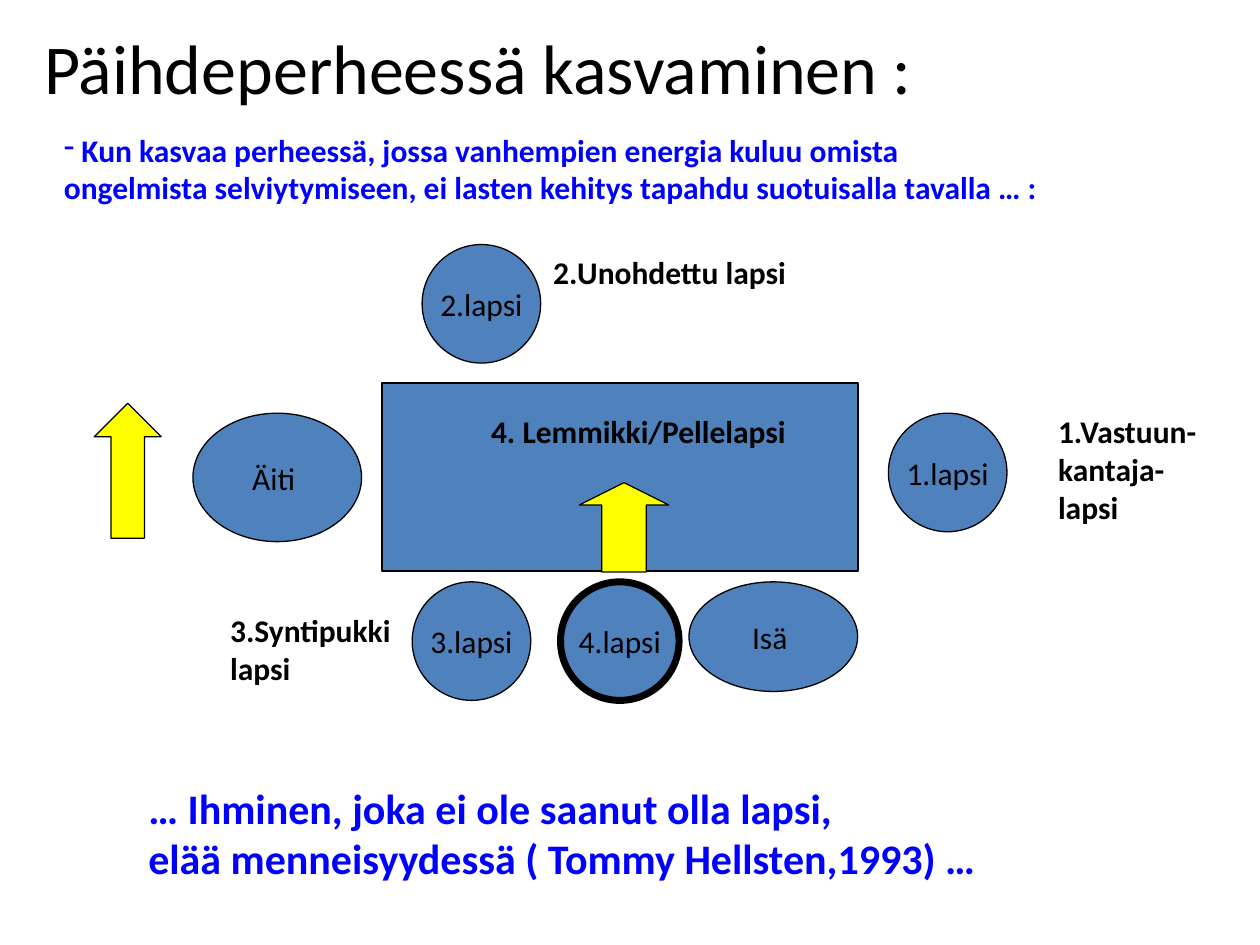
from lxml import etree
from pptx import Presentation
from pptx.dml.color import RGBColor
from pptx.enum.shapes import MSO_SHAPE
from pptx.enum.text import MSO_ANCHOR, MSO_AUTO_SIZE, PP_ALIGN
from pptx.oxml.ns import qn
from pptx.util import Cm, Pt

RECTANGLE, OVAL, UP_ARROW = MSO_SHAPE.RECTANGLE, MSO_SHAPE.OVAL, MSO_SHAPE.UP_ARROW
MIDDLE, CENTER = MSO_ANCHOR.MIDDLE, PP_ALIGN.CENTER
FIT_SHAPE = MSO_AUTO_SIZE.SHAPE_TO_FIT_TEXT

BLACK = RGBColor(0x00, 0x00, 0x00)
TABLE_BLUE = RGBColor(0x4F, 0x81, 0xBD)
TEXT_BLUE = RGBColor(0x00, 0x00, 0xFF)
YELLOW = RGBColor(0xFF, 0xFF, 0x00)
FONT = "Calibri"
CHILD_SIZE = 2.39


def write_text(frame, text, size=18, color=BLACK, bold=False, align=None):
    """Put each line of the text in a paragraph of its own."""
    frame.word_wrap = False
    for number, line in enumerate(text.split("\n")):
        paragraph = frame.add_paragraph() if number else frame.paragraphs[0]
        paragraph.alignment = align
        run = paragraph.add_run()
        run.text = line
        run.font.name = FONT
        run.font.size = Pt(size)
        run.font.bold = bold
        run.font.color.rgb = color


class FamilySlide:
    def __init__(self, slide, fill=TABLE_BLUE, line_width=0.75):
        self.slide = slide
        self.fill = fill
        self.line_width = line_width

    def shape(self, kind, left, top, width, height, fill=None, line_width=None):
        shape = self.slide.shapes.add_shape(
            kind, Cm(left), Cm(top), Cm(width), Cm(height))
        shape.shadow.inherit = False
        shape.fill.solid()
        shape.fill.fore_color.rgb = fill or self.fill
        shape.line.color.rgb = BLACK
        shape.line.width = Pt(line_width or self.line_width)
        return shape

    def person(self, name, left, top, width=CHILD_SIZE, height=CHILD_SIZE,
               line_width=None):
        oval = self.shape(OVAL, left, top, width, height, line_width=line_width)
        oval.text_frame.vertical_anchor = MIDDLE
        write_text(oval.text_frame, name, align=CENTER)

    def arrow(self, left, top, width, height, head):
        arrow = self.shape(UP_ARROW, left, top, width, height, fill=YELLOW)
        arrow.adjustments[0] = 0.5
        arrow.adjustments[1] = head

    def label(self, text, left, top, width, height, bold=True, **text_format):
        box = self.slide.shapes.add_textbox(
            Cm(left), Cm(top), Cm(width), Cm(height))
        write_text(box.text_frame, text, bold=bold, **text_format)
        box.text_frame.auto_size = FIT_SHAPE
        return box

    def dash_bullet(self, paragraph):
        bullet = etree.SubElement(paragraph._p.get_or_add_pPr(), qn("a:buChar"))
        bullet.set("char", "-")


def main():
    prs = Presentation()
    prs.slide_width, prs.slide_height = Cm(25.4), Cm(19.05)
    family = FamilySlide(prs.slides.add_slide(prs.slide_layouts[6]))

    # Table in the middle
    family.shape(RECTANGLE, 7.7, 7.72, 9.6, 3.79)

    # Title and introduction
    family.label("Päihdeperheessä kasvaminen :", 0.64, 0.38, 20.6, 1.96,
                 bold=False, size=40)
    intro = family.label(
        " Kun kasvaa perheessä, jossa vanhempien energia kuluu omista\n"
        "ongelmista selviytymiseen, ei lasten kehitys tapahdu suotuisalla tavalla … :",
        1.04, 2.51, 23.47, 1.78, color=TEXT_BLUE)
    family.dash_bullet(intro.text_frame.paragraphs[0])

    # Parents and children around the table
    family.person("Äiti ", 3.89, 8.33, 3.4, 2.59)
    family.person("Isä ", 13.89, 11.73, 3.4, 2.21)
    family.person("3.lapsi", 8.31, 11.73)
    family.person("4.lapsi", 11.3, 11.73, line_width=4)
    family.person("1.lapsi", 17.91, 8.33)
    family.person("2.lapsi", 8.51, 4.93)

    # Arrows
    family.arrow(1.9, 8.13, 1.35, 2.72, head=0.5)
    family.arrow(11.68, 9.73, 1.8, 1.8, head=0.25)

    # Roles of the children
    family.label("1.Vastuun-\nkantaja-\nlapsi", 21.08, 8.18, 3.76, 2.54)
    family.label("2.Unohdettu lapsi", 10.9, 4.98, 6.02, 1.02)
    family.label("3.Syntipukki\nlapsi", 4.39, 12.19, 4.42, 1.78)
    family.label("4. Lemmikki/Pellelapsi", 9.65, 8.18, 7.59, 1.02)

    # Closing quotation
    family.label(
        "… Ihminen, joka ei ole saanut olla lapsi,\n"
        "elää menneisyydessä ( Tommy Hellsten,1993) …",
        2.74, 15.65, 19.94, 2.29, size=24, color=TEXT_BLUE)

    prs.save("out.pptx")


if __name__ == "__main__":
    main()
